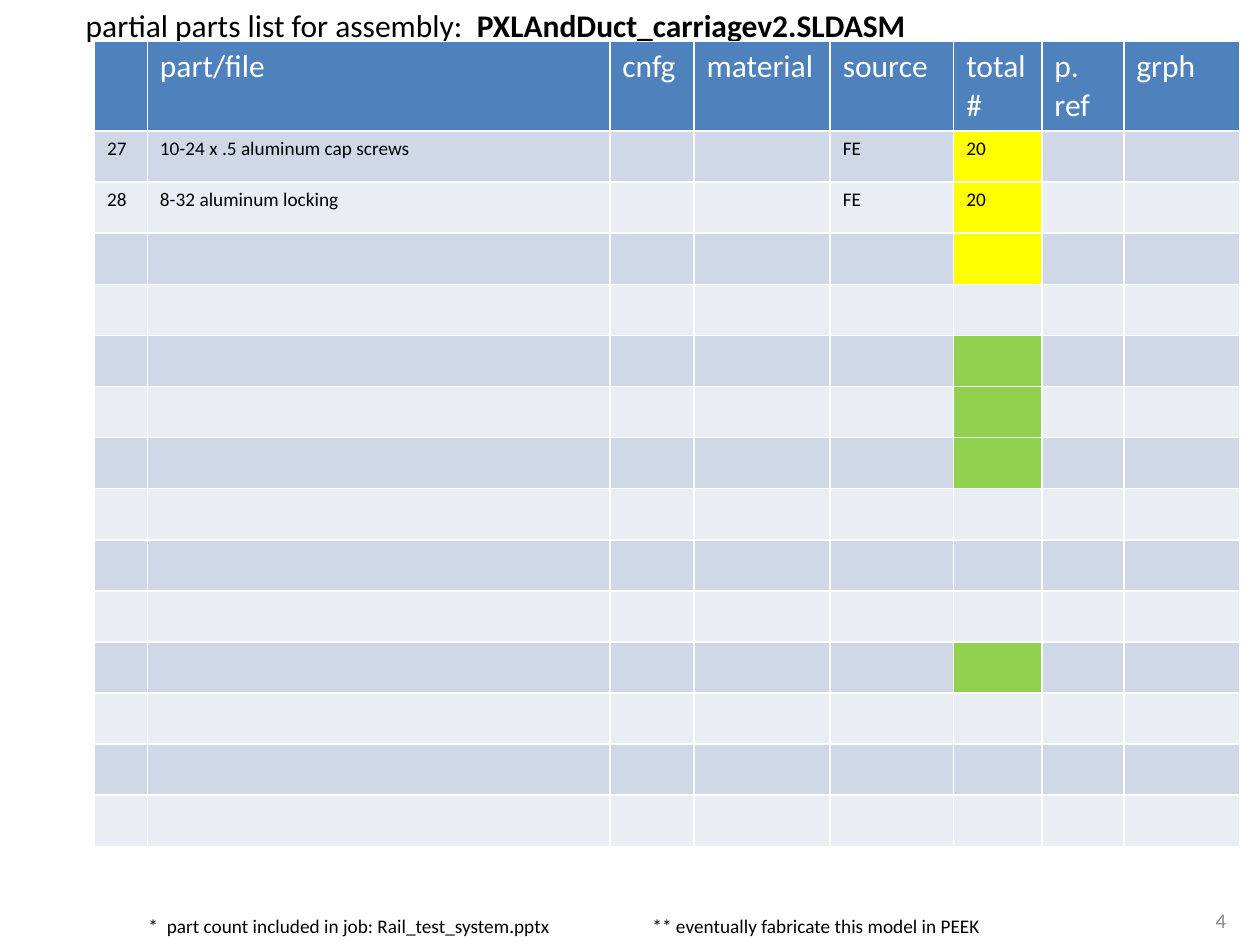
from dataclasses import dataclass

from pptx import Presentation
from pptx.dml.color import RGBColor as Rgb
from pptx.enum.text import MSO_ANCHOR as Anchor, PP_ALIGN as Align
from pptx.util import Inches, Pt


@dataclass(frozen=True)
class Theme:
    font: str = "Calibri"
    big: int = 18
    mid: int = 12
    small: int = 11
    ink: str = "000000"
    pale: str = "FFFFFF"
    gray: str = "8C8C8C"
    head: str = "4F81BD"
    odd: str = "D0D8E8"
    even: str = "E9EDF4"
    yellow: str = "FFFF00"
    green: str = "92D050"


THEME = Theme()
HEADS = ["", "part/file", "cnfg", "material", "source", "total\n#", "p. ref", "grph"]
WIDTHS = [0.42, 3.67, 0.67, 1.08, 0.98, 0.7, 0.65, 0.92]
PARTS = [
    ["27", "10-24 x .5 aluminum cap screws", "", "", "FE", "20", "", ""],
    ["28", "8-32 aluminum locking", "", "", "FE", "20", "", ""],
]
ROWS = 14
TOTAL = HEADS.index("total\n#")
MARKS = {**dict.fromkeys((1, 2, 3), THEME.yellow),
         **dict.fromkeys((5, 6, 7, 11), THEME.green)}


def write(para, text, size=THEME.small, color=THEME.ink, bold=False, align=Align.LEFT):
    """Add one run to a paragraph; an empty text only sets its type size."""
    para.alignment = align
    if not text:
        para.font.size = Pt(size)
        return
    run = para.add_run()
    run.text = text
    font = run.font
    font.name, font.size, font.bold = THEME.font, Pt(size), bold
    font.color.rgb = Rgb.from_string(color)


class Page:
    def __init__(self, deck, theme):
        self.theme = theme
        self.slide = deck.slides.add_slide(deck.slide_layouts[5])

    def title(self, lead, name, box):
        shape = self.slide.shapes.title
        shape.left, shape.top, shape.width, shape.height = map(Inches, box)
        frame = shape.text_frame
        frame.vertical_anchor = Anchor.TOP
        para = frame.paragraphs[0]
        write(para, lead, size=self.theme.big)
        write(para, name, size=self.theme.big, bold=True)

    def label(self, text, box, wrap=False, anchor=Anchor.TOP, **style):
        frame = self.slide.shapes.add_textbox(*map(Inches, box)).text_frame
        frame.word_wrap = wrap
        frame.vertical_anchor = anchor
        write(frame.paragraphs[0], text, **style)

    def cell(self, cell, text, fill, **style):
        cell.fill.solid()
        cell.fill.fore_color.rgb = Rgb.from_string(fill)
        frame = cell.text_frame
        for i, line in enumerate(text.split("\n")):
            para = frame.add_paragraph() if i else frame.paragraphs[0]
            write(para, line, **style)

    def table(self, left, top, head, body):
        """Draw the parts table; head and body are the heights of its two zones."""
        look = self.theme
        grid = self.slide.shapes.add_table(
            ROWS + 1, len(HEADS), Inches(left), Inches(top),
            Inches(sum(WIDTHS)), Inches(head + body)).table
        for col, width in zip(grid.columns, WIDTHS):
            col.width = Inches(width)
        for r, row in enumerate(grid.rows):
            row.height = Inches(body / ROWS if r else head)
            texts = PARTS[r - 1] if 0 < r <= len(PARTS) else [""] * len(HEADS)
            band = look.odd if r % 2 else look.even
            for c, cell in enumerate(row.cells):
                if r == 0:
                    self.cell(cell, HEADS[c], look.head, size=look.big, color=look.pale)
                    continue
                fill = MARKS.get(r, band) if c == TOTAL else band
                size = look.small if texts[c] else look.big
                self.cell(cell, texts[c], fill, size=size)


def main():
    deck = Presentation()
    deck.slide_width, deck.slide_height = Inches(10), Inches(7.5)
    page = Page(deck, THEME)
    page.label("4", (7.5, 7.1, 2.33, 0.4), wrap=True, anchor=Anchor.MIDDLE,
               size=THEME.mid, color=THEME.gray, align=Align.RIGHT)
    page.table(0.75, 0.33, head=0.71, body=5.68)
    page.title("partial parts list for assembly:  ", "PXLAndDuct_carriagev2.SLDASM",
               (0.58, 0, 8, 0.71))
    page.label("*  part count included in job: Rail_test_system.pptx",
               (1.08, 7.21, 3.41, 0.29))
    page.label("** eventually fabricate this model in PEEK", (5.08, 7.21, 2.82, 0.29))
    deck.save("out.pptx")


if __name__ == "__main__":
    main()
